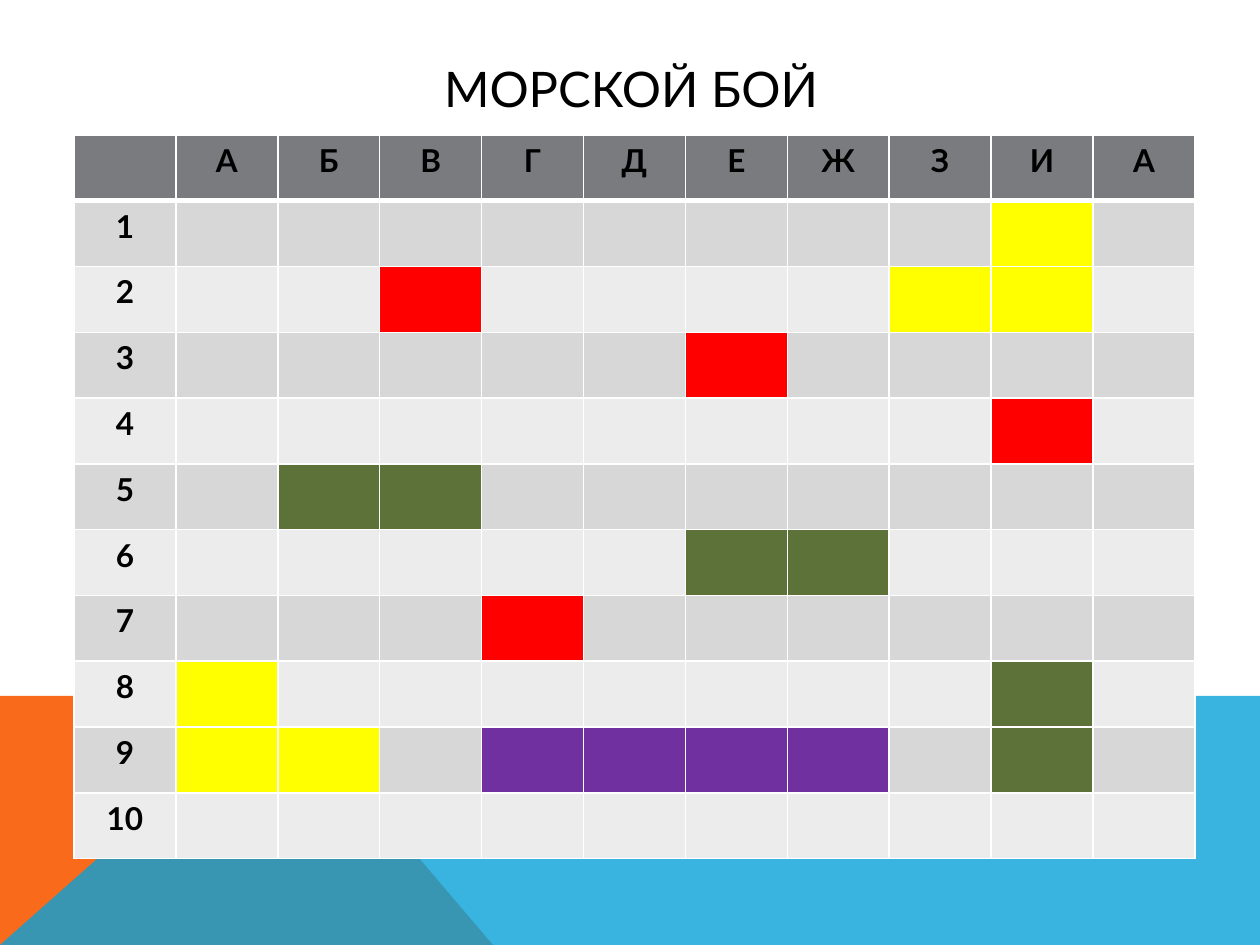
from dataclasses import dataclass

from lxml.etree import SubElement
from pptx import Presentation
from pptx.dml.color import RGBColor
from pptx.enum.text import MSO_ANCHOR, MSO_AUTO_SIZE, PP_ALIGN
from pptx.oxml.ns import qn
from pptx.util import Emu, Pt

EMU_PER_PX = 914400 / 126
FONT = "Lato"
COLORS = {
    "black": "000000", "white": "FFFFFF",
    "orange": "F96A1B", "blue": "08A1D9",
    "header": "797B7E", "odd": "D7D7D8", "even": "ECECEC",
    "red": "FF0000", "yellow": "FFFF00", "green": "5D7238", "purple": "7030A0",
}
LETTERS = "АБВГДЕЖЗИА"
ROWS = 10


@dataclass
class Band:
    points: list[tuple[int, int]]
    color: str
    alpha: int = 100


@dataclass
class Ship:
    color: str
    cells: list[tuple[int, int]]  # (row, column), both counted from 1


BANDS = [
    Band([(0, 945), (0, 696), (281, 696), (493, 945)], "orange"),
    Band([(0, 945), (281, 696), (1260, 696), (1260, 945)], "blue", 80),
]
SHIPS = [
    Ship("red", [(2, 3)]),
    Ship("red", [(3, 6)]),
    Ship("red", [(4, 9)]),
    Ship("red", [(7, 4)]),
    Ship("green", [(5, 2), (5, 3)]),
    Ship("green", [(6, 6), (6, 7)]),
    Ship("green", [(8, 9), (9, 9)]),
    Ship("yellow", [(1, 9), (2, 8), (2, 9)]),
    Ship("yellow", [(8, 1), (9, 1), (9, 2)]),
    Ship("purple", [(9, 4), (9, 5), (9, 6), (9, 7)]),
]


def px(value: int) -> Emu:
    return Emu(round(value * EMU_PER_PX))


def rgb(name: str) -> RGBColor:
    return RGBColor.from_string(COLORS[name])


def add_text(tf, text: str, size: int, bold: bool = False) -> None:
    p = tf.paragraphs[0]
    p.alignment = PP_ALIGN.CENTER
    r = p.add_run()
    r.text = text
    r.font.name = FONT
    r.font.size = Pt(size)
    r.font.bold = bold
    r.font.color.rgb = rgb("black")


def add_band(s, band: Band) -> None:
    start, *rest = band.points
    builder = s.shapes.build_freeform(*start, scale=EMU_PER_PX)
    builder.add_line_segments(rest, close=True)
    sp = builder.convert_to_shape()
    sp.shadow.inherit = False
    sp.line.fill.background()
    sp.fill.solid()
    sp.fill.fore_color.rgb = rgb(band.color)
    if band.alpha < 100:
        color = sp.fill._xPr.find(qn("a:solidFill"))[0]
        SubElement(color, qn("a:alpha"), val=str(band.alpha * 1000))


def add_title(s, text: str) -> None:
    sp = s.shapes.title
    sp.left, sp.top, sp.width, sp.height = px(113), px(50), px(1036), px(76)
    tf = sp.text_frame
    tf.auto_size = MSO_AUTO_SIZE.NONE
    tf.vertical_anchor = MSO_ANCHOR.MIDDLE
    add_text(tf, text, 28)


def set_borders(cell, top: int, bottom: int) -> None:
    tc_pr = cell._tc.get_or_add_tcPr()
    for tag, width in (("lnL", 1), ("lnR", 1), ("lnT", top), ("lnB", bottom)):
        ln = SubElement(tc_pr, qn(f"a:{tag}"), w=str(Pt(width)))
        fill = SubElement(ln, qn("a:solidFill"))
        SubElement(fill, qn("a:srgbClr"), val=COLORS["white"])


def add_board(s) -> None:
    n_rows, n_cols = ROWS + 1, len(LETTERS) + 1
    width, height = px(1121), px(724)
    table = s.shapes.add_table(n_rows, n_cols, px(74), px(135), width, height).table
    for col in table.columns:
        col.width = Emu(width // n_cols)
    for row in table.rows:
        row.height = Emu(height // n_rows)

    labels = {(0, j): letter for j, letter in enumerate(LETTERS, 1)}
    labels |= {(i, 0): str(i) for i in range(1, n_rows)}
    ship_colors = {pos: ship.color for ship in SHIPS for pos in ship.cells}

    for i in range(n_rows):
        row_color = "header" if i == 0 else "odd" if i % 2 else "even"
        for j in range(n_cols):
            cell = table.cell(i, j)
            set_borders(cell, top=3 if i == 1 else 1, bottom=3 if i == 0 else 1)
            cell.fill.solid()
            cell.fill.fore_color.rgb = rgb(ship_colors.get((i, j), row_color))
            if (i, j) in labels:
                add_text(cell.text_frame, labels[i, j], 18, bold=True)


def main() -> None:
    prs = Presentation()
    prs.slide_width, prs.slide_height = px(1260), px(945)
    s = prs.slides.add_slide(prs.slide_layouts[5])

    # Coloured bands at the foot
    for band in BANDS:
        add_band(s, band)

    # Title and game board
    add_title(s, "МОРСКОЙ БОЙ")
    add_board(s)

    prs.save("out.pptx")


if __name__ == "__main__":
    main()
